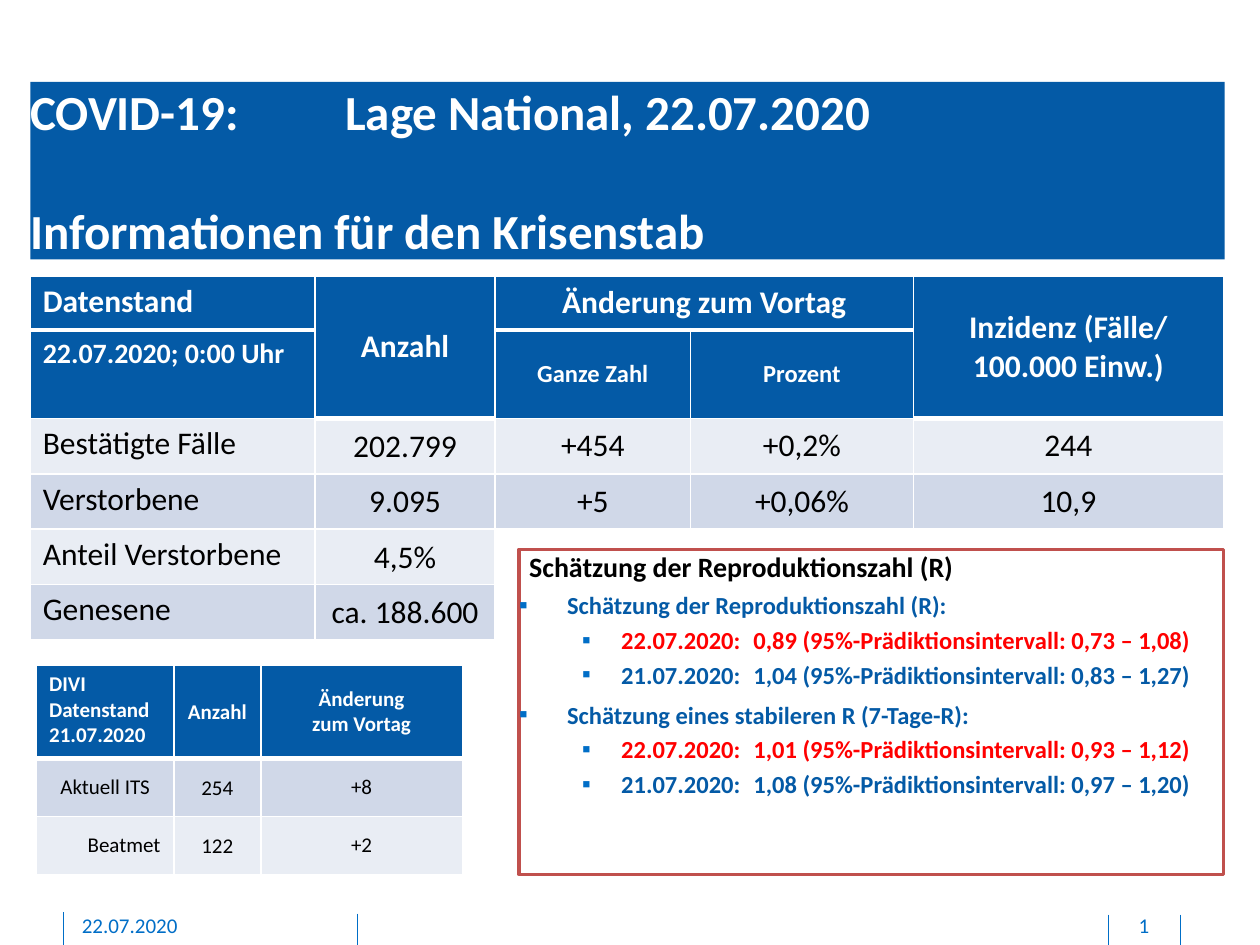
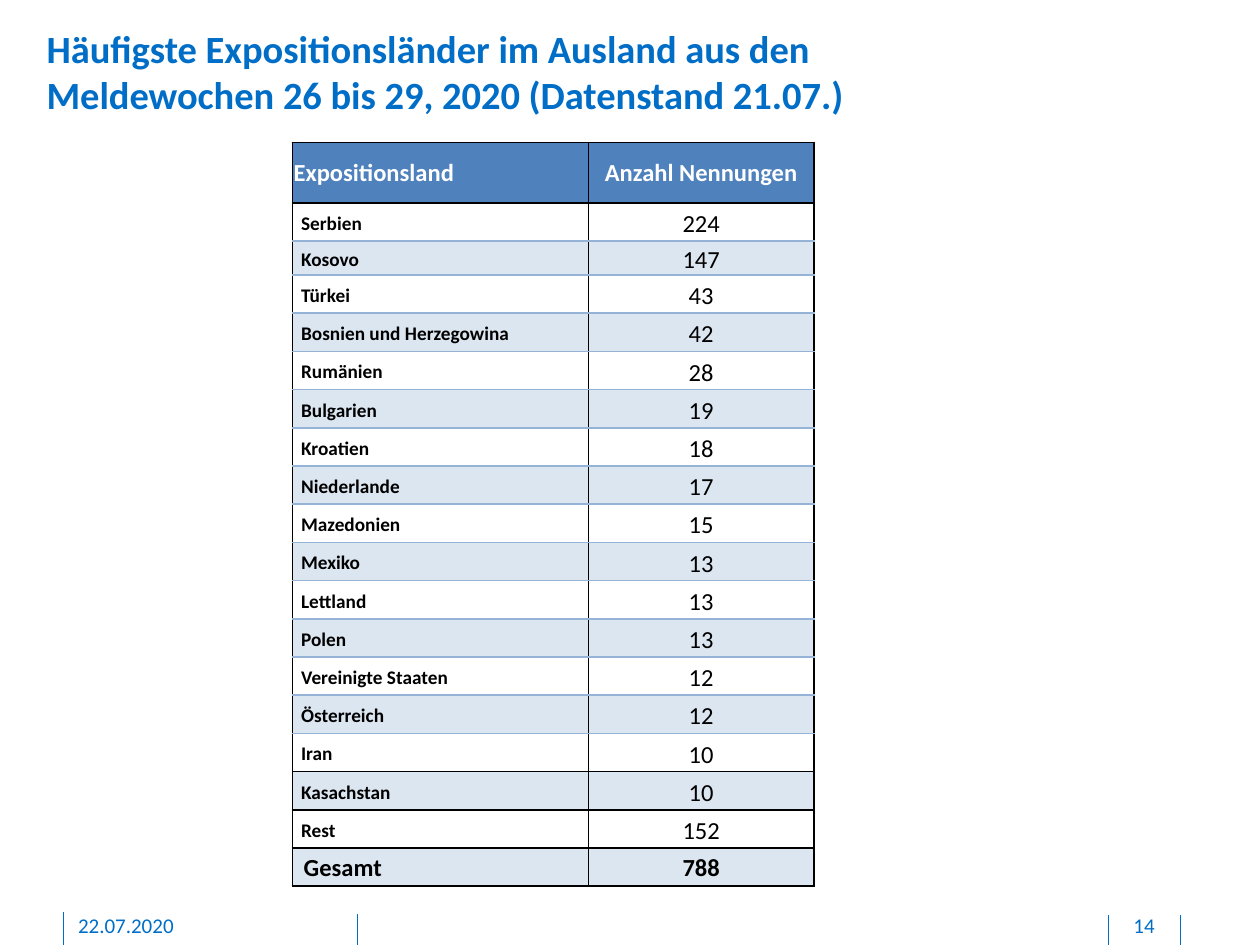
from lxml import etree
from pptx import Presentation
from pptx import util as u
from pptx.dml import color
from pptx.enum import shapes, text
from pptx.oxml import ns

FONT = "Calibri"
BLUE, NAVY, WHITE, BLACK, RED = "006EC7", "045AA6", "FFFFFF", "000000", "FF0000"
PALE, MID, STEEL, ICE, RULE, FRAME = "E9EDF4", "D0D8E8", "4F81BD", "DCE6F1", "95B3D7", "C0504D"
CENTER = text.PP_ALIGN.CENTER
MIDDLE = text.MSO_ANCHOR.MIDDLE
TIGHT = (0.1, 0.1, 0.1, 0)
COLUMNS, ROWS = 100, 75
UNIT = u.Inches(0.1)


def grid(*counts):
    """Turn counts of grid columns or rows into lengths."""
    return [u.Emu(round(count * UNIT)) for count in counts]


def rgb(value):
    """Turn a hex string into a colour."""
    return color.RGBColor.from_string(value)


def add(parent, tag, **attributes):
    """Append a drawing element and return it."""
    return etree.SubElement(parent, ns.qn(tag), {key: str(value) for key, value in attributes.items()})


def format_paragraph(paragraph, align=None, before=None, spacing=None, left=0, hang=0,
                     bullet=None, tab=None):
    """Set indents, bullet, tab stop and spacing of a paragraph."""
    properties = paragraph._p.get_or_add_pPr()
    if left:
        margin, indent = grid(left, -hang)
        properties.set("marL", str(margin))
        properties.set("indent", str(indent))
    if bullet:
        add(add(properties, "a:buClr"), "a:srgbClr", val=BLUE)
        add(properties, "a:buFont", typeface=FONT)
        add(properties, "a:buChar", char=bullet)
    if tab:
        add(add(properties, "a:tabLst"), "a:tab", pos=grid(tab)[0], algn="l")
    paragraph.alignment = align
    if before:
        paragraph.space_before = u.Pt(before)
    if spacing:
        paragraph.line_spacing = spacing


def write(frame, *lines, size=18, fill=BLACK, bold=False, **layout):
    """Write lines, each a string or a (string, overrides) pair, in one format."""
    base = dict(size=size, fill=fill, bold=bold, **layout)
    for index, line in enumerate(lines):
        words, changes = (line, {}) if isinstance(line, str) else line
        style = {**base, **changes}
        paragraph = frame.add_paragraph() if index else frame.paragraphs[0]
        run_size, run_fill, run_bold = (style.pop(key) for key in ("size", "fill", "bold"))
        format_paragraph(paragraph, **style)
        run = paragraph.add_run()
        run.text = words
        run.font.name, run.font.size, run.font.bold = FONT, u.Pt(run_size), run_bold
        run.font.color.rgb = rgb(run_fill)


def add_panel(slide, box, *lines, back=None, edge=None, inset_bottom=0, **style):
    """Place a text panel with optional fill and outline."""
    panel = slide.shapes.add_shape(shapes.MSO_SHAPE.RECTANGLE, *grid(*box)) if back \
        else slide.shapes.add_textbox(*grid(*box))
    if back:
        panel.shadow.inherit = False
        panel.fill.solid()
        panel.fill.fore_color.rgb = rgb(back)
        panel.line.fill.background()
    if edge:
        panel.line.color.rgb = rgb(edge)
        panel.line.width = u.Pt(2)
    frame = panel.text_frame
    frame.word_wrap = True
    frame.vertical_anchor = text.MSO_ANCHOR.TOP
    frame.margin_left, frame.margin_top, frame.margin_right, frame.margin_bottom = \
        grid(0, 0, 0, inset_bottom)
    write(frame, *lines, **{"align": text.PP_ALIGN.LEFT, **style})


def add_title(slide, box, *lines, **style):
    """Place a slide title."""
    add_panel(slide, box, *lines, bold=True, **style)


def add_footer(slide, date_left, number):
    """Place the footer rules, the date and the slide number."""
    top = 72.4
    for x, drop in ((28.4, 0.1), (5, 0), (93.7, 0.2), (88, 0.2)):
        rule = slide.shapes.add_connector(shapes.MSO_CONNECTOR.STRAIGHT, *grid(x, top + drop, x, ROWS))
        rule.line.color.rgb = rgb(BLUE)
        rule.line.width = u.Pt(0.5)
        add(rule._element.spPr, "a:effectLst")
    style = dict(size=12, fill=BLUE, inset_bottom=0.5)
    add_panel(slide, (date_left, top, 20.3, 2.1), "22.07.2020", **style)
    add_panel(slide, (88.1, top, 5.4, 2.1), number, align=CENTER, **style)


def add_grid_table(slide, left, top, widths, heights):
    """Place a plain table with the given columns and rows."""
    box = grid(left, top, sum(widths), sum(heights))
    table = slide.shapes.add_table(len(heights), len(widths), *box).table
    table.first_row = table.horz_banding = False
    for column, width in zip(table.columns, grid(*widths)):
        column.width = width
    for row, height in zip(table.rows, grid(*heights)):
        row.height = height
    return table


def set_cell(cell, *lines, back=None, anchor=MIDDLE, inset=None, **style):
    """Fill one cell and write its lines."""
    if back:
        cell.fill.solid()
        cell.fill.fore_color.rgb = rgb(back)
    else:
        cell.fill.background()
    cell.vertical_anchor = anchor
    if inset:
        cell.margin_left, cell.margin_top, cell.margin_right, cell.margin_bottom = grid(*inset)
    write(cell.text_frame, *lines, **style)


def set_borders(cell, **sides):
    """Draw cell borders, each side given as (colour, points)."""
    properties = cell._tc.get_or_add_tcPr()
    for index, side in enumerate(key for key in "LRTB" if key in sides):
        tint, points = sides[side]
        line = etree.Element(ns.qn(f"a:ln{side}"), w=str(u.Pt(points)))
        add(add(line, "a:solidFill"), "a:srgbClr", val=tint)
        properties.insert(index, line)


def rule_white(table):
    """Draw white rules, thicker below the header cells."""
    for row, cells in enumerate(table.rows):
        for cell in cells.cells:
            thin = (WHITE, 1)
            bottom = (WHITE, 3) if row == 0 or cell.is_spanned else thin
            top = {"T": thin} if row == 0 else {}
            set_borders(cell, L=thin, R=thin, B=bottom, **top)


def add_case_table(slide, left, top):
    """Place the table of national case numbers."""
    table = add_grid_table(slide, left, top, (22.6, 14.3, 15.5, 17.7, 24.6), (4.3, 7) + (4.4,) * 4)
    for start, end in (((0, 1), (1, 1)), ((0, 2), (0, 3)), ((0, 4), (1, 4))):
        table.cell(*start).merge(table.cell(*end))
    upper = text.MSO_ANCHOR.TOP
    head = dict(back=NAVY, fill=WHITE, bold=True)
    set_cell(table.cell(0, 0), "Datenstand", anchor=upper, **head)
    set_cell(table.cell(1, 0), "22.07.2020; 0:00 Uhr", anchor=upper, size=16, **head)
    headings = ((0, 1, 18, ["Anzahl"]), (0, 2, 18, ["Änderung zum Vortag"]),
                (0, 4, 18, ["Inzidenz (Fälle/", "100.000 Einw.)"]),
                (1, 2, 14, ["Ganze Zahl"]), (1, 3, 14, ["Prozent"]))
    for row, column, size, lines in headings:
        set_cell(table.cell(row, column), *lines, size=size, align=CENTER, **head)
    cases = (("Bestätigte Fälle", "202.799", "+454", "+0,2%", "244"),
             ("Verstorbene", "9.095", "+5", "+0,06%", "10,9"),
             ("Anteil Verstorbene", "4,5%"),
             ("Genesene", "ca. 188.600"))
    for row, (label, count, *changes) in enumerate(cases, 2):
        band = MID if row % 2 else PALE
        set_cell(table.cell(row, 0), label, back=band, anchor=upper)
        set_cell(table.cell(row, 1), count, back=band, inset=TIGHT, align=CENTER)
        for column in range(2, 5):
            if changes:
                set_cell(table.cell(row, column), changes[column - 2], back=band, align=CENTER)
            else:
                set_cell(table.cell(row, column), back=WHITE)
    rule_white(table)


def add_care_table(slide, left, top):
    """Place the table of intensive care numbers."""
    table = add_grid_table(slide, left, top, (10.9, 6.9, 16), (7.4, 4.6, 4.6))
    head = dict(back=NAVY, fill=WHITE, bold=True, size=12)
    set_cell(table.cell(0, 0), "DIVI", "Datenstand", "21.07.2020", anchor=text.MSO_ANCHOR.TOP, **head)
    set_cell(table.cell(0, 1), "Anzahl", align=CENTER, **head)
    set_cell(table.cell(0, 2), "Änderung", "zum Vortag", align=CENTER, **head)
    patients = (("Aktuell ITS", "254", "+8", MID, 0), ("Beatmet", "122", "+2", PALE, 3))
    for row, (label, count, change, band, indent) in enumerate(patients, 1):
        style = dict(back=band, size=12, align=CENTER)
        set_cell(table.cell(row, 0), label, left=indent, **style)
        set_cell(table.cell(row, 1), count, inset=TIGHT, **style)
        set_cell(table.cell(row, 2), change, **style)
    rule_white(table)


def add_estimate_panel(slide, box):
    """Place the framed estimates of the reproduction number."""
    estimates = (("Schätzung der Reproduktionszahl (R):", 4.3,
                  "0,89 (95%-Prädiktionsintervall: 0,73 – 1,08)",
                  "1,04 (95%-Prädiktionsintervall: 0,83 – 1,27)"),
                 ("Schätzung eines stabileren R (7-Tage-R):", 6,
                  "1,01 (95%-Prädiktionsintervall: 0,93 – 1,12)",
                  "1,08 (95%-Prädiktionsintervall: 0,97 – 1,20)"))
    lines = [("Schätzung der Reproduktionszahl (R)", dict(size=16, fill=BLACK, left=0.8))]
    for heading, before, today, yesterday in estimates:
        lines.append((heading, dict(left=3.8, hang=3.8, before=before, bullet="▪")))
        for day, value, tint in (("22", today, RED), ("21", yesterday, NAVY)):
            lines.append((f"{day}.07.2020:\t{value}",
                          dict(fill=tint, left=8.1, hang=3.1, before=3, bullet="▪", tab=18.6)))
    add_panel(slide, box, *lines, back=WHITE, edge=FRAME, size=14, fill=NAVY, bold=True)


def add_country_table(slide, left, top, height):
    """Place the table of exposure countries."""
    countries = (("Serbien", 224), ("Kosovo", 147), ("Türkei", 43), ("Bosnien und Herzegowina", 42),
                 ("Rumänien", 28), ("Bulgarien", 19), ("Kroatien", 18), ("Niederlande", 17),
                 ("Mazedonien", 15), ("Mexiko", 13), ("Lettland", 13), ("Polen", 13),
                 ("Vereinigte Staaten", 12), ("Österreich", 12), ("Iran", 10), ("Kasachstan", 10),
                 ("Rest", 152))
    head, low = 4.8, 2.7
    even = (height - head - low) / len(countries)
    heights = [head, even, low] + [even] * (len(countries) - 1)
    table = add_grid_table(slide, left, top, (23.5, 17.9), heights)
    total = len(heights) - 1
    heading = dict(back=STEEL, fill=WHITE, bold=True, size=14, inset=TIGHT)
    set_cell(table.cell(0, 0), "Expositionsland", **heading)
    set_cell(table.cell(0, 1), "Anzahl Nennungen", align=CENTER, **heading)
    for row, (country, count) in enumerate(countries, 1):
        style = dict(back=None if row % 2 else ICE, inset=(0.7, 0, 0.7, 0), spacing=1.15)
        set_cell(table.cell(row, 0), country, size=11, bold=True, **style)
        set_cell(table.cell(row, 1), str(count), size=14, align=CENTER, **style)
    sums = dict(back=ICE, bold=True, size=14, inset=TIGHT)
    set_cell(table.cell(total, 0), "Gesamt", left=0.8, **sums)
    set_cell(table.cell(total, 1), "788", align=CENTER, **sums)
    dark, light = (BLACK, 1), (RULE, 1)
    edges = [dark, dark] + [light] * (total - 4) + [dark] * 4
    for row, cells in enumerate(table.rows):
        for cell in cells.cells:
            set_borders(cell, L=dark, R=dark, T=edges[row], B=edges[row + 1])


def build_situation(slide):
    """Build the slide on the national situation."""
    add_footer(slide, 6.5, "1")
    add_title(slide, (2.4, 6.5, 94.8, 14.1),
              ("COVID-19:\tLage National, 22.07.2020", dict(tab=25)),
              ("Informationen für den Krisenstab", dict(before=34)),
              back=NAVY, size=28, fill=WHITE)
    add_case_table(slide, 2.4, 21.9)
    add_care_table(slide, 2.9, 52.8)
    add_estimate_panel(slide, (41.2, 43.6, 55.9, 25.8))


def build_exposure(slide):
    """Build the slide on exposure abroad."""
    add_title(slide, (3.7, 2, 77.4, 7.4),
              "Häufigste Expositionsländer im Ausland aus den Meldewochen 26 bis 29, 2020 "
              "(Datenstand 21.07.)", size=22, fill=BLUE)
    add_footer(slide, 6.2, "14")
    add_country_table(slide, 23.2, 11.3, 59.1)


def main():
    """Build and save the presentation."""
    deck = Presentation()
    deck.slide_width, deck.slide_height = grid(COLUMNS, ROWS)
    for build in (build_situation, build_exposure):
        build(deck.slides.add_slide(deck.slide_layouts[6]))
    deck.save("out.pptx")


if __name__ == "__main__":
    main()
